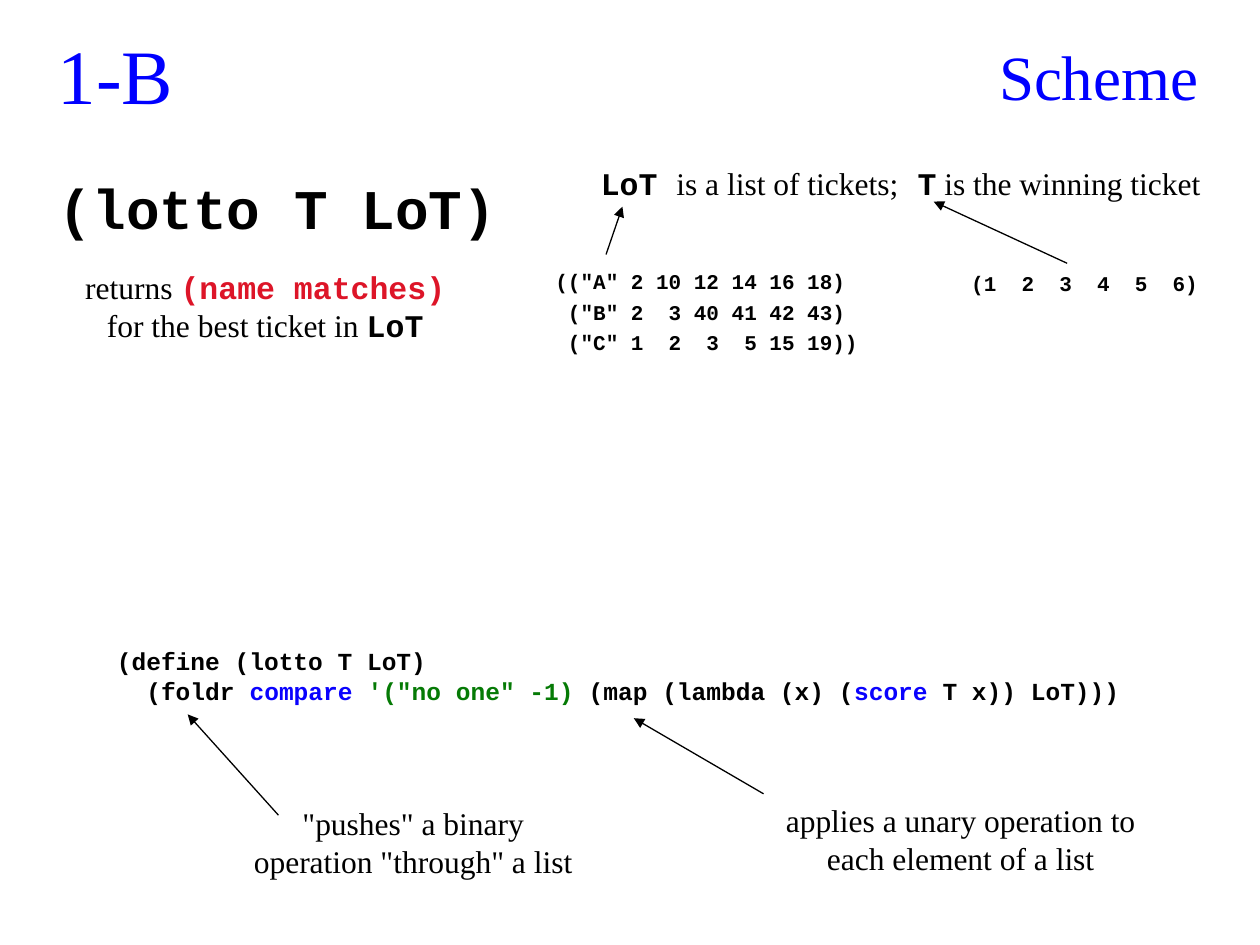
from collections import namedtuple

from lxml import etree
from pptx import Presentation
from pptx.dml.color import RGBColor
from pptx.enum.shapes import MSO_CONNECTOR
from pptx.enum.text import MSO_ANCHOR, MSO_AUTO_SIZE, PP_ALIGN
from pptx.oxml.ns import qn
from pptx.util import Inches, Pt

LEFT, CENTER = PP_ALIGN.LEFT, PP_ALIGN.CENTER
TOP, MIDDLE = MSO_ANCHOR.TOP, MSO_ANCHOR.MIDDLE
FIT_TEXT = MSO_AUTO_SIZE.SHAPE_TO_FIT_TEXT
STRAIGHT = MSO_CONNECTOR.STRAIGHT

COLUMNS, ROWS = 100, 75
CELL = Inches(0.1)
SERIF, MONO = "Times New Roman", "Courier New"
COLORS = {
    "black": "000000",
    "title": "0000FF",
    "result": "DD1528",
    "helper": "0A02FE",
    "seed": "057A05",
}

Box = namedtuple("Box", "left top width height")
Span = namedtuple("Span", "text font color", defaults=(SERIF, "black"))


def code(text, color="black"):
    return Span(text, MONO, color)


def cells(count):
    return round(count * CELL)


def inside(box, left, top, width, height):
    """Return a box whose corner is measured from the corner of another box."""
    return Box(box.left + left, box.top + top, width, height)


def add_text(page, box, paragraphs, size, align=LEFT, anchor=TOP, wrap=True,
             space_before=50, line_spacing=None):
    """Place paragraphs, each a list of spans; code spans are bold."""
    frame = page.shapes.add_textbox(*map(cells, box)).text_frame
    frame.word_wrap = wrap
    frame.auto_size = FIT_TEXT
    frame.vertical_anchor = anchor
    for index, spans in enumerate(paragraphs):
        para = frame.add_paragraph() if index else frame.paragraphs[0]
        para.alignment = align
        para.line_spacing = line_spacing
        if space_before:
            before = etree.SubElement(para._p.get_or_add_pPr(), qn("a:spcBef"))
            etree.SubElement(before, qn("a:spcPct"), val=str(space_before * 1000))
        for span in spans:
            run = para.add_run()
            run.text = span.text
            run.font.name = span.font
            run.font.size = Pt(size)
            run.font.bold = span.font == MONO
            run.font.color.rgb = RGBColor.from_string(COLORS[span.color])


def add_arrow(page, box, start, end):
    """Draw an arrow between two points measured from the corner of the box."""
    points = [cells(corner + offset) for point in (start, end)
              for corner, offset in zip((box.left, box.top), point)]
    arrow = page.shapes.add_connector(STRAIGHT, *points)
    arrow.line.width = Pt(0.75)
    arrow.line.color.rgb = RGBColor.from_string(COLORS["black"])
    etree.SubElement(arrow.line._get_or_add_ln(), qn("a:tailEnd"), type="triangle")
    etree.SubElement(arrow._element.spPr, qn("a:effectLst"))


def add_header(page, box):
    add_text(page, inside(box, 1.9, 1.7, 14.5, 8.3),
             [[Span("1-B", color="title")]], 44, CENTER)
    add_text(page, inside(box, 78.3, 2.5, 17.8, 7),
             [[Span("Scheme", color="title")]], 36, CENTER, MIDDLE, wrap=False)


def add_problem(page, box):
    add_text(page, inside(box, 3.7, 1.3, 36.7, 6.3), [[code("(lotto T LoT)")]],
             32, anchor=MIDDLE, wrap=False, space_before=0)
    result = [Span("returns "), code("(name matches)", "result"),
              Span(" for the best ticket in "), code("LoT")]
    add_text(page, inside(box, 4.7, 8.8, 32.7, 7), [result],
             18, CENTER, MIDDLE, space_before=0)


def add_examples(page, box):
    arguments = [code("LoT "), Span("is a list of tickets;"),
                 code(" T"), Span(" is the winning ticket")]
    tickets = ['(("A" 2 10 12 14 16 18)',
               ' ("B" 2  3 40 41 42 43)',
               ' ("C" 1  2  3  5 15 19))']
    add_text(page, inside(box, 4.7, 0.5, 49.6, 4), [arguments], 18, wrap=False)
    add_text(page, inside(box, 1.1, 9.2, 26, 7.8),
             [[code(ticket)] for ticket in tickets],
             12, wrap=False, line_spacing=0.8)
    add_text(page, inside(box, 34.1, 9, 20, 3),
             [[code("(1  2  3  4  5  6)")]], 12, wrap=False)
    add_arrow(page, box, (6.1, 8.2), (7.4, 4.4))
    add_arrow(page, box, (42.7, 8.9), (32.1, 4))


def add_definition(page, box):
    lines = [
        [code("(define (lotto T LoT)")],
        [code("  (foldr "), code("compare ", "helper"),
         code("'(\"no one\" -1)", "seed"), code(" (map (lambda (x) ("),
         code("score", "helper"), code(" T x)) LoT)))")],
    ]
    add_text(page, inside(box, 8.3, 0.8, 83.7, 5.7), lines, 14, space_before=0)


def add_notes_on_calls(page, box):
    notes = [
        ('"pushes" a binary operation "through" a list',
         (18, 6.8, 29.6, 7), (22.1, 8.2), (14.9, 0.2)),
        ("applies a unary operation to each element of a list",
         (60, 6.6, 32.5, 7), (60.6, 6.5), (50.3, 0.5)),
    ]
    for text, place, start, end in notes:
        add_arrow(page, box, start, end)
        add_text(page, inside(box, *place), [[Span(text)]], 18, CENTER)


def main():
    deck = Presentation()
    deck.slide_width, deck.slide_height = cells(COLUMNS), cells(ROWS)
    page = deck.slides.add_slide(deck.slide_layouts[6])
    add_header(page, Box(0, 0, COLUMNS, 12))
    add_problem(page, Box(0, 12, 42, 18))
    add_examples(page, Box(42, 12, COLUMNS - 42, 18))
    add_definition(page, Box(0, 50, COLUMNS, 6.5))
    add_notes_on_calls(page, Box(0, 56.5, COLUMNS, 15))
    deck.save("out.pptx")


if __name__ == "__main__":
    main()
